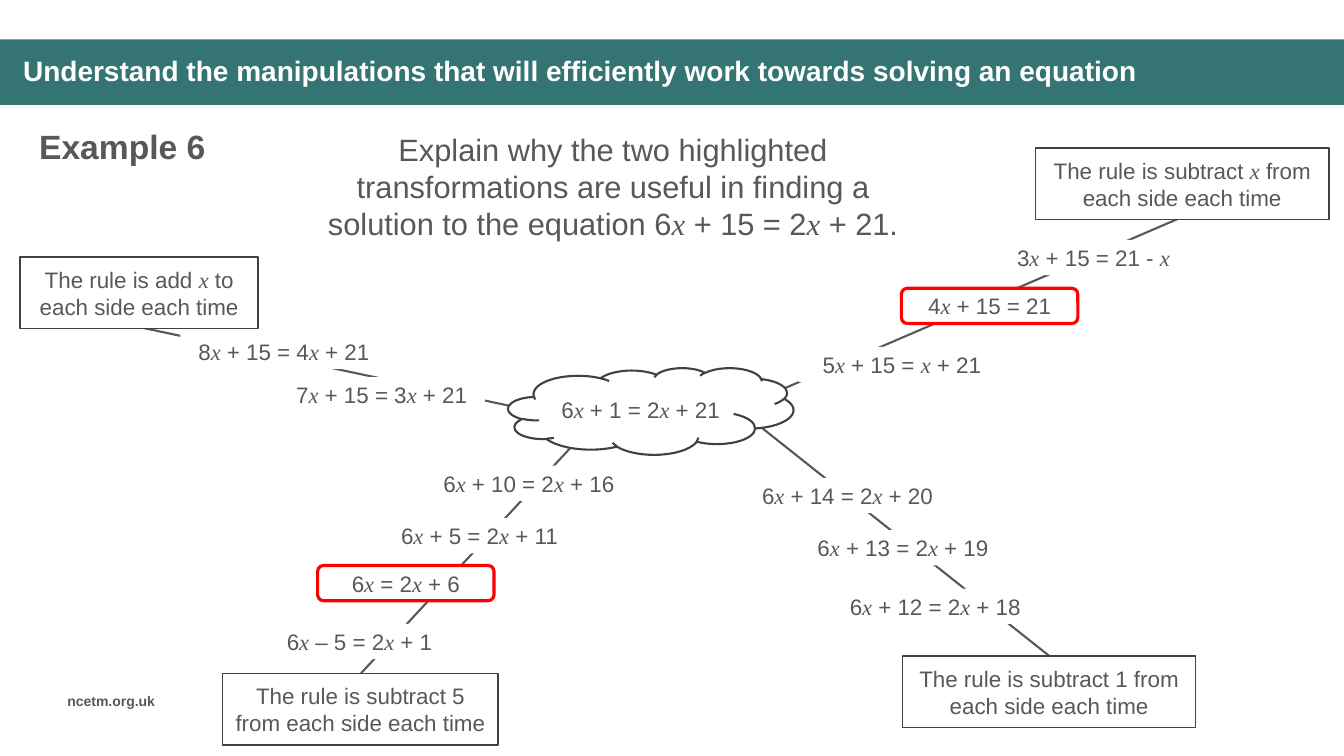
from pptx import Presentation
from pptx.dml.color import RGBColor
from pptx.enum.shapes import MSO_CONNECTOR, MSO_SHAPE
from pptx.enum.text import MSO_ANCHOR, PP_ALIGN
from pptx.oxml.ns import qn
from pptx.util import Inches, Pt
from lxml import etree

# Content: asterisks enclose italic variables
TITLE = "Understand the manipulations that will efficiently work towards solving an equation"
EXAMPLE = "Example 6"
TASK = ("Explain why the two highlighted transformations are useful in finding "
        "a solution to the equation 6*x* + 15 = 2*x* + 21.")
SITE = "ncetm.org.uk"
START = "6*x* + 1 = 2*x* + 21"

# Rule boxes: left, top, width, text
RULES = [
    (10.27, 1.47, 2.91, "The rule is subtract *x* from each side each time"),
    (0.2, 2.55, 2.36, "The rule is add *x* to each side each time"),
    (2.21, 6.68, 2.73, "The rule is subtract 5 from each side each time"),
    (8.95, 6.51, 2.91, "The rule is subtract 1 from each side each time"),
]

# Branches: line start, line end, equations as (left, top, text)
BRANCHES = [
    ((7.67, 3.9), (11.71, 2.16), [
        (7.92, 3.44, "5*x* + 15 = *x* + 21"),
        (8.94, 2.86, "4*x* + 15 = 21"),
        (9.82, 2.38, "3*x* + 15 = 21 - *x*")]),
    ((7.55, 4.24), (10.41, 6.51), [
        (7.38, 4.74, "6*x* + 14 = 2*x* + 20"),
        (7.93, 5.26, "6*x* + 13 = 2*x* + 19"),
        (8.25, 5.84, "6*x* + 12 = 2*x* + 18")]),
    ((1.31, 3.23), (5.45, 4.11), [
        (2.76, 3.74, "7*x* + 15 = 3*x* + 21"),
        (1.79, 3.31, "8*x* + 15 = 4*x* + 21")]),
    ((3.58, 6.68), (5.67, 4.43), [
        (4.22, 4.62, "6*x* + 10 = 2*x* + 16"),
        (3.73, 5.14, "6*x* + 5 = 2*x* + 11"),
        (3.15, 5.61, "6*x* = 2*x* + 6"),
        (2.54, 6.19, "6*x* – 5 = 2*x* + 1")]),
]
HIGHLIGHTED = ("4*x* + 15 = 21", "6*x* = 2*x* + 6")

TEAL = RGBColor(0x34, 0x75, 0x74)
GREY = RGBColor(0x58, 0x58, 0x58)
DARK = RGBColor(0x41, 0x41, 0x41)
RED = RGBColor(0xFF, 0, 0)
WHITE = RGBColor(0xFF, 0xFF, 0xFF)
RULE_H, EQ_H, EQ_W, HIGHLIGHT_W = 0.71, 0.35, 2.05, 1.75

prs = Presentation()
prs.slide_width, prs.slide_height = Inches(13.33), Inches(7.5)
s = prs.slides.add_slide(prs.slide_layouts[6])


def write(sp, text, size=16, color=GREY, bold=False, align=PP_ALIGN.CENTER,
          anchor=MSO_ANCHOR.MIDDLE, spacing=None):
    tf = sp.text_frame
    tf.word_wrap = True
    tf.vertical_anchor = anchor
    p = tf.paragraphs[0]
    p.alignment = align
    p.line_spacing = spacing
    for i, part in enumerate(text.split("*")):
        if part:
            r = p.add_run()
            r.text = part
            variable = i % 2 == 1
            r.font.name = "Times New Roman" if variable else "Arial"
            r.font.italic = variable
            r.font.size, r.font.bold = Pt(size), bold
            r.font.color.rgb = color


def add_box(kind, box, fill=None, line=None, weight=1):
    sp = s.shapes.add_shape(kind, *map(Inches, box))
    sp.shadow.inherit = False
    if fill is None:
        sp.fill.background()
    else:
        sp.fill.solid()
        sp.fill.fore_color.rgb = fill
    if line is None:
        sp.line.fill.background()
    else:
        sp.line.color.rgb = line
        sp.line.width = Pt(weight)
    return sp


def add_text(box, text, **fmt):
    write(s.shapes.add_textbox(*map(Inches, box)), text, **fmt)


# Title band and footer
add_box(MSO_SHAPE.RECTANGLE, (0, 0.39, 13.33, 0.65), TEAL)
add_text((0.13, 0.48, 12.32, 0.47), TITLE, size=20, color=WHITE, bold=True,
         align=PP_ALIGN.LEFT, spacing=0.9)
add_text((0.57, 6.82, 1.21, 0.27), SITE, size=10, bold=True,
         align=PP_ALIGN.LEFT, anchor=MSO_ANCHOR.TOP)

# Heading and task
add_text((0.29, 1.2, 2.6, 0.5), EXAMPLE, size=24, bold=True,
         align=PP_ALIGN.LEFT, anchor=MSO_ANCHOR.TOP)
add_text((2.99, 1.25, 6.18, 1.21), TASK, size=22, anchor=MSO_ANCHOR.TOP)

# Branch lines, behind the cloud and boxes
for start, end, _ in BRANCHES:
    line = s.shapes.add_connector(MSO_CONNECTOR.STRAIGHT, *map(Inches, start + end))
    line.line.color.rgb = GREY
    line.line.width = Pt(1.5)
    etree.SubElement(line._element.spPr, qn("a:effectLst"))

# Starting equation
write(add_box(MSO_SHAPE.CLOUD, (5.04, 3.65, 2.83, 0.86), WHITE, DARK, 1.5), START)

# Rules
for left, top, width, text in RULES:
    write(add_box(MSO_SHAPE.RECTANGLE, (left, top, width, RULE_H), WHITE, DARK), text)

# Equations, with a red frame round the highlighted ones
for _, _, equations in BRANCHES:
    for left, top, text in equations:
        marked = text in HIGHLIGHTED
        box = (left, top, HIGHLIGHT_W if marked else EQ_W, EQ_H)
        write(add_box(MSO_SHAPE.RECTANGLE, box, WHITE), text)
        if marked:
            add_box(MSO_SHAPE.ROUNDED_RECTANGLE, box, line=RED, weight=2.25)

prs.save("out.pptx")
